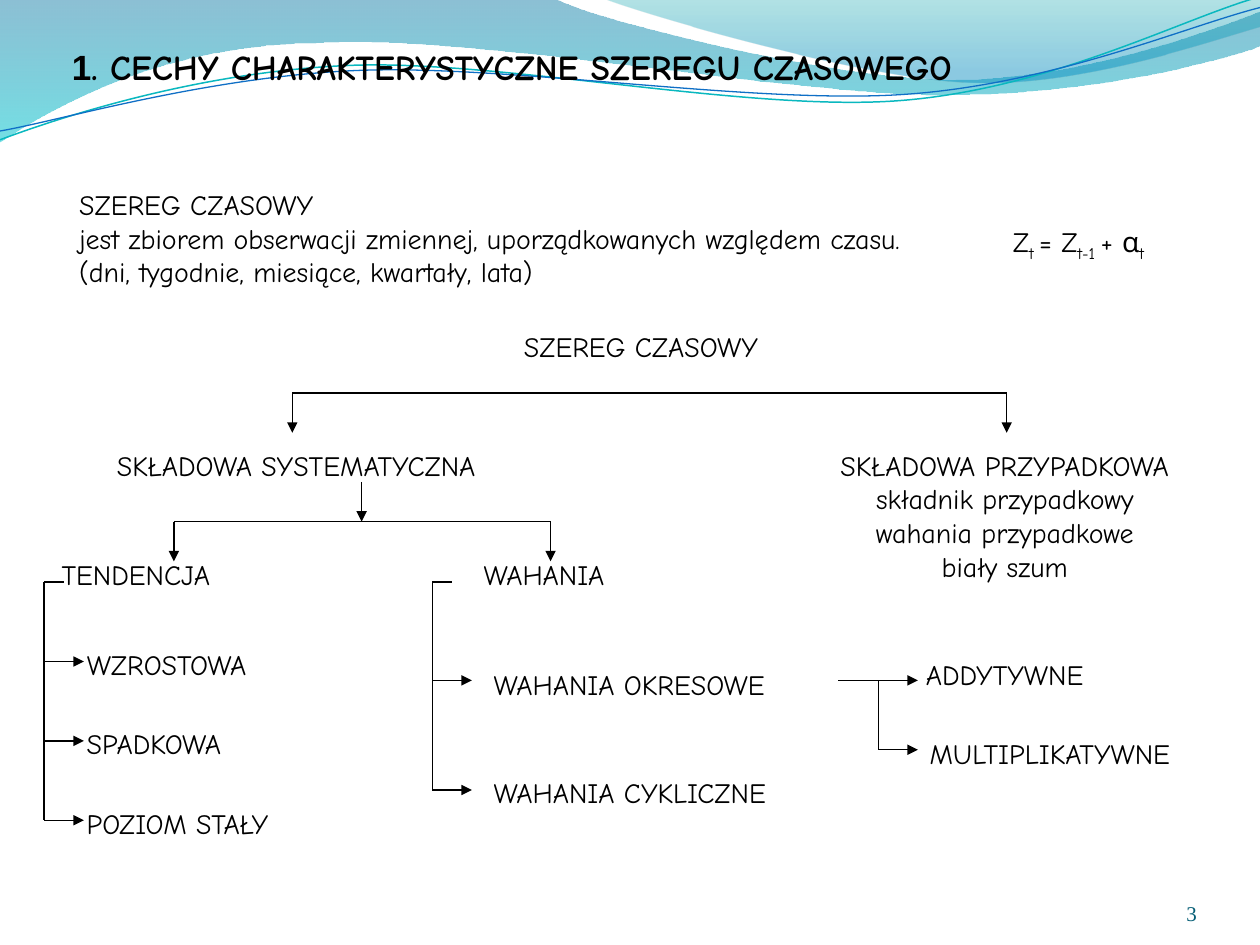
from lxml.etree import SubElement
from pptx import Presentation
from pptx.dml.color import RGBColor
from pptx.enum.shapes import MSO_CONNECTOR as CONN
from pptx.enum.text import MSO_ANCHOR as ANCHOR, MSO_AUTO_SIZE as FIT, PP_ALIGN as ALIGN
from pptx.oxml.ns import qn
from pptx.util import Inches, Pt

COLORS = {"text": "000000", "line": "000000", "number": "045D75",
          "blue": "0074A1", "cyan": "00C6CF", "teal": "00A1A9", "sky": "008BBF",
          "teal line": "0AB8BF", "blue line": "0F6FC6"}
FONT = "Comic Neue"
STEP = 0.315     # length of an arrow
LABEL_H = 0.37

# A wave is a start point, then line ends (1 point) or Bézier curves (3 points).
WAVES = [
    ([(0, -0.01)], [(4.4, -0.01)],
     [(4.76, 0.17), (6.64, 0.63), (7.58, 0.63)], [(8.53, 0.63), (9.58, 0.26), (10, 0.09)],
     [(10.01, 0.36)],
     [(9.83, 0.44), (8.7, 0.76), (7.46, 0.75)], [(6.22, 0.75), (3.82, 0.28), (2.57, 0.34)],
     [(1.29, 0.35), (0.46, 0.83), (-0.01, 1.13)], [(0, -0.01)]),
    ([(4.79, -0.01)],
     [(5.09, 0.11), (6.82, 0.62), (7.69, 0.65)], [(8.56, 0.69), (9.61, 0.32), (10, 0.21)],
     [(10, 0)], [(4.79, -0.01)]),
]
WAVE_FILLS = [[(0, "blue", 45), (1, "cyan", 55)], [(0, "teal", 30), (0.8, "sky", 45)]]
WAVE_LINES = [
    ("teal line", 0.85, ([(0, 1.11)],
     [(0.48, 0.93), (1.58, 0.57), (2.77, 0.52)], [(3.95, 0.47), (5.93, 0.89), (7.13, 0.8)],
     [(8.33, 0.71), (9.38, 0.15), (9.98, -0.02)])),
    ("blue line", 0.75, ([(0, 1.04)],
     [(0.47, 0.96), (1.64, 0.61), (2.83, 0.56)], [(4.03, 0.51), (5.97, 0.83), (7.17, 0.75)],
     [(8.36, 0.67), (9.41, 0.21), (10, 0.06)])),
]
LABELS = [
    ("SZEREG CZASOWY", 4.06, 2.57, 2.3),
    ("SKŁADOWA SYSTEMATYCZNA", 0.83, 3.51, 3.59),
    ("TENDENCJA", 0.39, 4.38, 1.59),
    ("WAHANIA", 3.74, 4.38, 1.46),
    ("WZROSTOWA", 0.59, 5.09, 1.78),
    ("SPADKOWA", 0.59, 5.09 + 2 * STEP, 1.5),
    ("POZIOM STAŁY", 0.59, 5.09 + 4 * STEP, 1.94),
    ("WAHANIA OKRESOWE", 3.82, 5.25, 2.75),
    ("WAHANIA CYKLICZNE", 3.82, 6.11, 2.72),
    ("ADDYTYWNE", 7.25, 5.17, 1.66),
    ("MULTIPLIKATYWNE", 7.28, 5.8, 2.45),
]


def rgb(name):
    return RGBColor.from_string(COLORS[name])


def add_wave(s, segments, close):
    """Freeform whose three-point segments become cubic curves."""
    (x0, y0), *rest = [(Inches(x), Inches(y)) for seg in segments for x, y in seg]
    builder = s.shapes.build_freeform(x0, y0)
    builder.add_line_segments(rest, close=close)
    sp = builder.convert_to_shape()
    sp.shadow.inherit = False
    nodes = iter(list(sp._element.iter(qn("a:lnTo"))))
    for seg in segments[1:]:
        lines = [next(nodes) for _ in seg]
        if len(seg) == 3:
            curve = SubElement(lines[0].getparent(), qn("a:cubicBezTo"))
            lines[0].addprevious(curve)
            for line in lines:
                curve.append(line[0])
                line.getparent().remove(line)
    return sp


def fill_wave(sp, stops):
    sp.line.fill.background()
    sp.fill.gradient()
    sp.fill.gradient_angle = 270
    for stop, (pos, color, _) in zip(sp.fill.gradient_stops, stops):
        stop.position = pos
        stop.color.rgb = rgb(color)
    for clr, (_, _, opacity) in zip(sp._element.spPr.iter(qn("a:srgbClr")), stops):
        SubElement(clr, qn("a:alpha"), val=str(opacity * 1000))


def add_run(p, text, size=16, font=FONT, color="text", bold=False, base=0):
    r = p.add_run()
    r.text = text
    for name, value in {"size": Pt(size), "name": font, "bold": bold}.items():
        setattr(r.font, name, value)
    r.font.color.rgb = rgb(color)
    if base:
        r.font._element.set("baseline", str(base * 1000))


def add_box(s, left, top, width, height, wrap=False):
    tf = s.shapes.add_textbox(*map(Inches, (left, top, width, height))).text_frame
    tf.word_wrap = wrap
    tf.auto_size = FIT.SHAPE_TO_FIT_TEXT
    return tf


def add_text(s, lines, left, top, width, height=LABEL_H, align=ALIGN.LEFT):
    tf = add_box(s, left, top, width, height)
    for i, line in enumerate(lines):
        p = tf.add_paragraph() if i else tf.paragraphs[0]
        p.alignment = align
        add_run(p, line)


def add_line(s, x1, y1, x2, y2, arrow=False):
    c = s.shapes.add_connector(CONN.STRAIGHT, *map(Inches, (x1, y1, x2, y2)))
    c.line.color.rgb = rgb("line")
    c.line.width = Pt(0.75)
    if arrow:
        SubElement(c.line._get_or_add_ln(), qn("a:tailEnd"), type="triangle")
    SubElement(c._element.spPr, qn("a:effectLst"))


def add_fork(s, y, xs):
    """Horizontal bar with an arrow down from each end."""
    add_line(s, xs[0], y, xs[-1], y)
    for x in xs:
        add_line(s, x, y, x, y + STEP, arrow=True)


def add_bracket(s, x, top, ys):
    """Vertical trunk with an arrow to the right at each of ys."""
    add_line(s, x, top, x, ys[-1])
    for y in ys:
        add_line(s, x, y, x + STEP, y, arrow=True)


def add_title(s):
    title = s.shapes.title
    s.shapes._spTree.append(title._element)  # in front of the waves
    box = {"left": 0.47, "top": 0.31, "width": 8.59, "height": 0.43}
    for name, value in box.items():
        setattr(title, name, Inches(value))
    tf = title.text_frame
    tf.auto_size = FIT.SHAPE_TO_FIT_TEXT
    tf.vertical_anchor = ANCHOR.TOP
    p = tf.paragraphs[0]
    p.alignment = ALIGN.LEFT
    add_run(p, "1", 20, "Arial", bold=True)
    add_run(p, ". CECHY CHARAKTERYSTYCZNE SZEREGU CZASOWEGO", 20, bold=True)


def add_formula(s):
    p = add_box(s, 7.94, 1.73, 1.57, LABEL_H, wrap=True).paragraphs[0]
    for text, base in [("Z", 0), ("t ", -25), ("= Z", 0), ("t-1 ", -25), ("+ α", 0), ("t", -25)]:
        add_run(p, text, base=base)


def add_number(s):
    tf = add_box(s, 8.67, 6.95, 0.83, 0.4, wrap=True)
    tf.auto_size = FIT.NONE
    tf.vertical_anchor = ANCHOR.BOTTOM
    for side in ("left", "top", "right", "bottom"):
        setattr(tf, "margin_" + side, 0)
    tf.paragraphs[0].alignment = ALIGN.RIGHT
    add_run(tf.paragraphs[0], "3", 12, "Times New Roman", "number")


def main():
    prs = Presentation()
    prs.slide_width, prs.slide_height = Inches(10), Inches(7.5)
    s = prs.slides.add_slide(prs.slide_layouts[5])

    for segments, stops in zip(WAVES, WAVE_FILLS):
        fill_wave(add_wave(s, segments, close=True), stops)
    for color, width, segments in WAVE_LINES:
        sp = add_wave(s, segments, close=False)
        sp.fill.background()
        sp.line.color.rgb = rgb(color)
        sp.line.width = Pt(width)

    add_title(s)
    add_text(s, ["SZEREG CZASOWY",
                 "jest zbiorem obserwacji zmiennej, uporządkowanych względem czasu.",
                 "(dni, tygodnie, miesiące, kwartały, lata)"], 0.53, 1.44, 7.38, 0.9)
    add_formula(s)
    for text, left, top, width in LABELS:
        add_text(s, [text], left, top, width)
    add_text(s, ["SKŁADOWA PRZYPADKOWA", "składnik przypadkowy", "wahania przypadkowe",
                 "biały szum"], 6.34, 3.51, 3.27, 1.17, ALIGN.CENTER)

    add_fork(s, 3.12, [2.32, 7.99])
    add_line(s, 2.87, 4.14 - STEP, 2.87, 4.14, arrow=True)
    add_fork(s, 4.14, [1.38, 4.37])
    for x, ys in [(0.35, [4.62 + n * STEP for n in (2, 4, 6)]), (3.43, [5.4, 6.27])]:
        add_line(s, x, 4.62, x + STEP / 2, 4.62)
        add_bracket(s, x, 4.62, ys)
    add_line(s, 6.97 - STEP, 5.4, 6.97, 5.4)
    add_bracket(s, 6.97, 5.4, [5.4, 5.95])
    add_number(s)
    prs.save("out.pptx")


if __name__ == "__main__":
    main()
